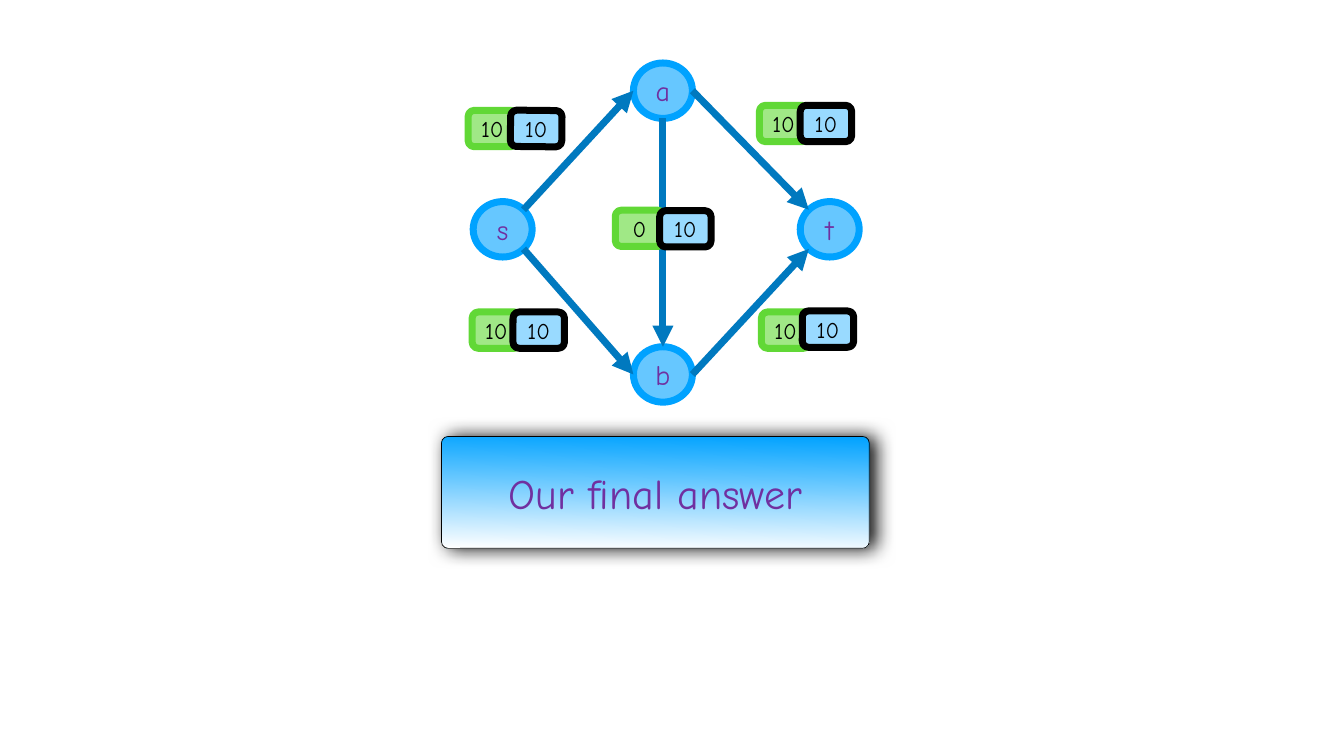
import math

from lxml import etree
from pptx import Presentation
from pptx.dml.color import RGBColor
from pptx.enum import shapes, text
from pptx.oxml import ns
from pptx.util import Pt

PX = 9144  # EMU per px, 100 px to the inch
FONT = "Comic Neue"
COLORS = {
    "node": "66C7FF", "node_line": "00A2FF", "edge": "0079BF",
    "flow": "A0E886", "flow_line": "61D836",
    "capacity": "99DAFF", "black": "000000",
    "white": "FFFFFF", "purple": "7030A0",
}
NODE_W, NODE_H = 117, 110
FLOW_W, CAPACITY_W, LABEL_H = 96, 102, 72

# Left and top of each node
NODES = {"s": (939, 400), "a": (1257, 125), "b": (1257, 688), "t": (1588, 400)}

# Start node, its exit angle, end node, its entry angle (clockwise from the right)
EDGES = [
    ("s", -45, "a", 180), ("s", 45, "b", 180),
    ("b", 0, "t", 135), ("a", 0, "t", -135), ("a", 90, "b", -90),
]

# Flow and its left and top, then capacity and its left, top and rotation
LABELS = [
    ("10", 937, 619, "10", 1018, 619, 0),
    ("10", 1507, 209, "10", 1588, 209, 0),
    ("10", 1511, 619, "10", 1592, 617, 0),
    ("10", 929, 219, "10", 1013, 219, 0.6),
    ("0", 1221, 417, "10", 1309, 418, 0),
]


def rgb(name):
    return RGBColor.from_string(COLORS[name])


def add_box(slide, kind, box, words, size, ink, line, width, fill=None):
    shape = slide.shapes.add_shape(kind, *(v * PX for v in box))
    shape.shadow.inherit = False
    if fill:
        shape.fill.solid()
        shape.fill.fore_color.rgb = rgb(fill)
    shape.line.color.rgb = rgb(line)
    shape.line.width = Pt(width)
    frame = shape.text_frame
    frame.margin_left = frame.margin_right = 6 * PX
    frame.margin_top = frame.margin_bottom = 6 * PX
    frame.vertical_anchor = text.MSO_ANCHOR.MIDDLE
    frame.word_wrap = True
    frame.text = words
    paragraph = frame.paragraphs[0]
    paragraph.alignment = text.PP_ALIGN.CENTER
    font = paragraph.runs[0].font
    font.name, font.size = FONT, Pt(size)
    font.color.rgb = rgb(ink)
    return shape


def add_node(slide, name):
    node = add_box(slide, shapes.MSO_SHAPE.OVAL, (*NODES[name], NODE_W, NODE_H),
                   name, 40, "purple", "node_line", 10, "node")
    node.text_frame.auto_size = text.MSO_AUTO_SIZE.SHAPE_TO_FIT_TEXT


def rim_point(name, degrees):
    left, top = NODES[name]
    angle = math.radians(degrees)
    return (round((left + NODE_W / 2 * (1 + math.cos(angle))) * PX),
            round((top + NODE_H / 2 * (1 + math.sin(angle))) * PX))


def add_edge(slide, start, exit_angle, end, entry_angle):
    edge = slide.shapes.add_connector(
        shapes.MSO_CONNECTOR.STRAIGHT,
        *rim_point(start, exit_angle), *rim_point(end, entry_angle))
    edge.line.color.rgb = rgb("edge")
    edge.line.width = Pt(10)
    arrow = etree.SubElement(edge.line._get_or_add_ln(), ns.qn("a:tailEnd"))
    arrow.set("type", "triangle")
    etree.SubElement(edge._element.spPr, ns.qn("a:effectLst"))


def add_tag(slide, box, words, line, fill):
    tag = add_box(slide, shapes.MSO_SHAPE.ROUNDED_RECTANGLE, box,
                  words, 32, "black", line, 10, fill)
    tag.text_frame.auto_size = text.MSO_AUTO_SIZE.SHAPE_TO_FIT_TEXT
    return tag


def add_label(slide, flow, flow_x, flow_y, capacity, cap_x, cap_y, rotation):
    add_tag(slide, (flow_x, flow_y, FLOW_W, LABEL_H), flow, "flow_line", "flow")
    tag = add_tag(slide, (cap_x, cap_y, CAPACITY_W, LABEL_H),
                  capacity, "black", "capacity")
    tag.rotation = rotation


def add_banner(slide, box, words):
    banner = add_box(slide, shapes.MSO_SHAPE.ROUNDED_RECTANGLE, box,
                     words, 60, "purple", "black", 1)
    banner.adjustments[0] = 0.06
    banner.fill.gradient()
    banner.fill.gradient_angle = 269
    for stop, name in zip(banner.fill.gradient_stops, ("node_line", "white")):
        stop.color.rgb = rgb(name)
    # Soft shadow to the right
    effects = banner._element.spPr.find(ns.qn("a:effectLst"))
    shadow = etree.SubElement(effects, ns.qn("a:outerShdw"), blurRad=str(Pt(28)),
                              dist=str(Pt(9)), dir="0", rotWithShape="0")
    color = etree.SubElement(shadow, ns.qn("a:srgbClr"), val=COLORS["black"])
    etree.SubElement(color, ns.qn("a:alpha"), val="97000")


def main():
    prs = Presentation()
    prs.slide_width, prs.slide_height = 2667 * PX, 1500 * PX
    slide = prs.slides.add_slide(prs.slide_layouts[6])

    # Flow network
    for name in NODES:
        add_node(slide, name)
    for edge in EDGES:
        add_edge(slide, *edge)
    for label in LABELS:
        add_label(slide, *label)

    # Conclusion
    add_banner(slide, (876, 866, 849, 222), "Our final answer")
    prs.save("out.pptx")


if __name__ == "__main__":
    main()
